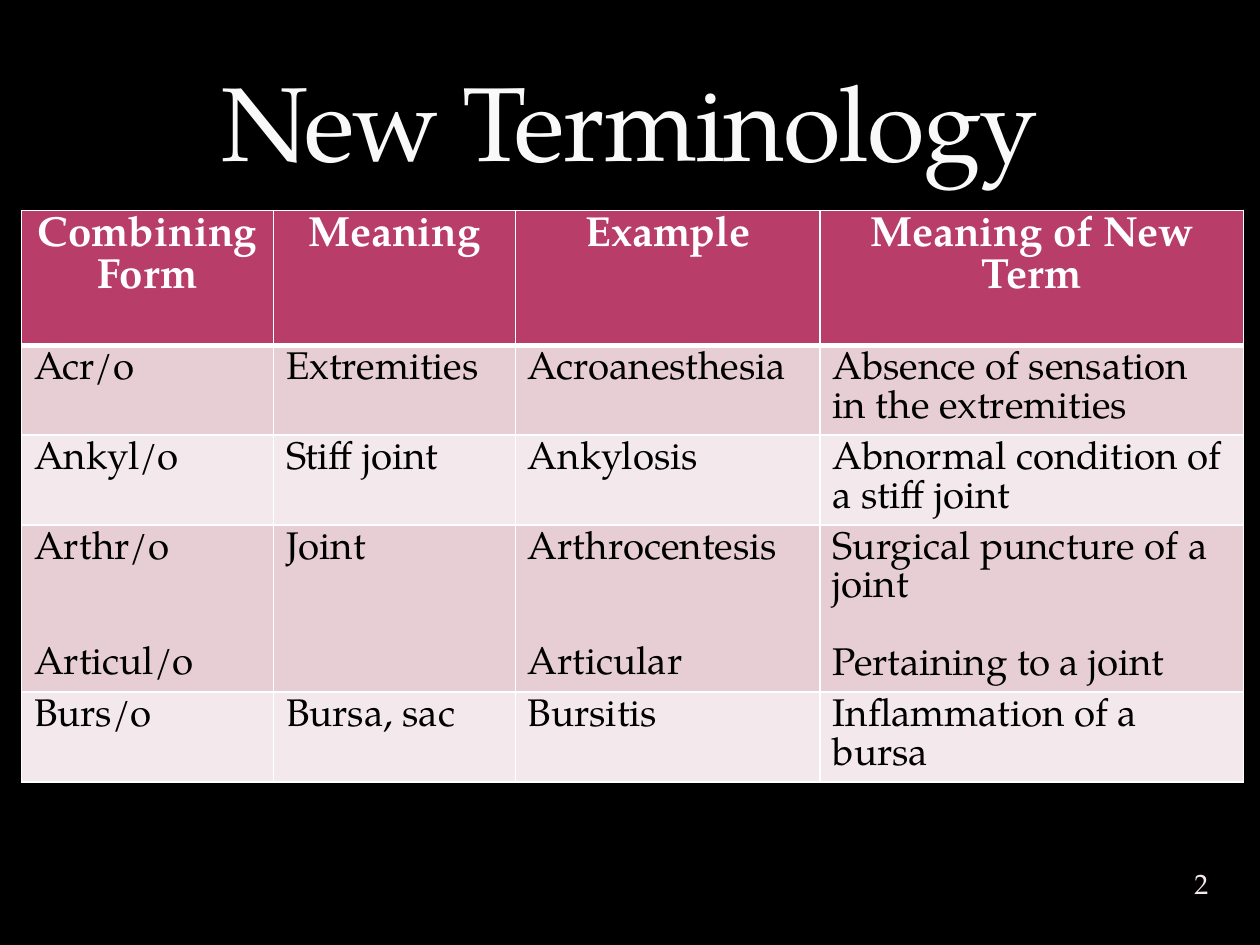
"""Build the New Terminology slide with its table of combining forms."""
from lxml.etree import SubElement
from pptx import Presentation
from pptx.dml.color import RGBColor
from pptx.enum.text import MSO_ANCHOR as Anchor, PP_ALIGN as Align
from pptx.oxml import parse_xml
from pptx.oxml.ns import qn
from pptx.util import Inches, Pt

FONT = "TeX Gyre Pagella"
BLACK = RGBColor(0x00, 0x00, 0x00)
WHITE = RGBColor(0xFF, 0xFF, 0xFF)
PALE = RGBColor(0xF9, 0xF9, 0xF9)
BLUSH = RGBColor(0xF4, 0xE7, 0xED)
ROSE = RGBColor(0xB8, 0x3D, 0x68)
BANDS = (RGBColor(0xE6, 0xCE, 0xD4), RGBColor(0xF3, 0xE8, 0xEB))
PLUM = RGBColor(0x9C, 0x38, 0x88)
DRAW = "http://schemas.openxmlformats.org/drawingml/2006/main"

COLS = (2, 1.92, 2.42, 3.36)
ROWS = (1.07, 0.56, 0.56, 0.56, 0.56)
TERMS = (
    ("Combining Form", "Meaning", "Example", "Meaning of New Term"),
    ("Acr/o", "Extremities", "Acroanesthesia",
     "Absence of sensation in the extremities"),
    ("Ankyl/o", "Stiff joint", "Ankylosis",
     "Abnormal condition of a stiff joint"),
    ("Arthr/o\nArticul/o", "Joint", "Arthrocentesis\nArticular",
     "Surgical puncture of a joint\nPertaining to a joint"),
    ("Burs/o", "Bursa, sac", "Bursitis", "Inflammation of a bursa"),
)


def write(frame, text, size, color, bold=False, align=Align.LEFT, gap=0):
    frame.word_wrap = True
    frame.text = text
    for i, para in enumerate(frame.paragraphs):
        para.alignment = align
        if i:
            para.space_before = Pt(gap)
        for run in para.runs:
            font = run.font
            font.name, font.size, font.bold = FONT, Pt(size), bold
            font.color.rgb = color


def add_box(slide, text, area, anchor, inset=None, **style):
    box = slide.shapes.add_textbox(*map(Inches, area))
    frame = box.text_frame
    frame.vertical_anchor = anchor
    if inset is not None:
        frame.margin_left = frame.margin_right = Inches(inset)
        frame.margin_top = frame.margin_bottom = Inches(inset)
    write(frame, text, align=Align.CENTER, **style)
    return box


def trim(box):
    props = box.text_frame.paragraphs[0].runs[0].font._element
    props.set("spc", "-100")
    props.insert(0, parse_xml(
        f'<a:ln xmlns:a="{DRAW}" w="{Pt(0.25)}"><a:solidFill>'
        f'<a:srgbClr val="{PLUM}"><a:alpha val="25000"/></a:srgbClr>'
        '</a:solidFill></a:ln>'))


def edge(cell, top, low):
    props = cell._tc.get_or_add_tcPr()
    for side, width in (("L", 1), ("R", 1), ("T", top), ("B", low)):
        line = SubElement(props, qn(f"a:ln{side}"), w=str(Pt(width)))
        fill = SubElement(line, qn("a:solidFill"))
        SubElement(fill, qn("a:srgbClr"), val=str(WHITE))


def add_grid(slide):
    area = map(Inches, (0.17, 1.67, sum(COLS), sum(ROWS)))
    grid = slide.shapes.add_table(len(ROWS), len(COLS), *area).table
    for col, width in zip(grid.columns, COLS):
        col.width = Inches(width)
    for r, (row, height, terms) in enumerate(zip(grid.rows, ROWS, TERMS)):
        row.height = Inches(height)
        head = r == 0
        for c, (cell, term) in enumerate(zip(row.cells, terms)):
            edge(cell, 3 if r == 1 else 1, 3 if head else 1)
            cell.fill.solid()
            cell.fill.fore_color.rgb = ROSE if head else BANDS[(r - 1) % 2]
            if head:
                write(cell.text_frame, term, 24, WHITE, True, Align.CENTER)
            else:
                gap = 22 if c == len(COLS) - 1 else 44
                write(cell.text_frame, term, 22, BLACK, gap=gap)


def main():
    deck = Presentation()
    deck.slide_width, deck.slide_height = Inches(10), Inches(7.5)
    slide = deck.slides.add_slide(deck.slide_layouts[6])
    back = slide.background.fill
    back.solid()
    back.fore_color.rgb = BLACK
    add_grid(slide)
    add_box(slide, "2", (9.2, 6.76, 0.67, 0.5), Anchor.MIDDLE, inset=0,
            size=16, color=BLUSH)
    title = add_box(slide, "New Terminology", (0.5, 0.17, 9, 1.33),
                    Anchor.BOTTOM, size=60, color=PALE)
    trim(title)
    deck.save("out.pptx")


if __name__ == "__main__":
    main()
